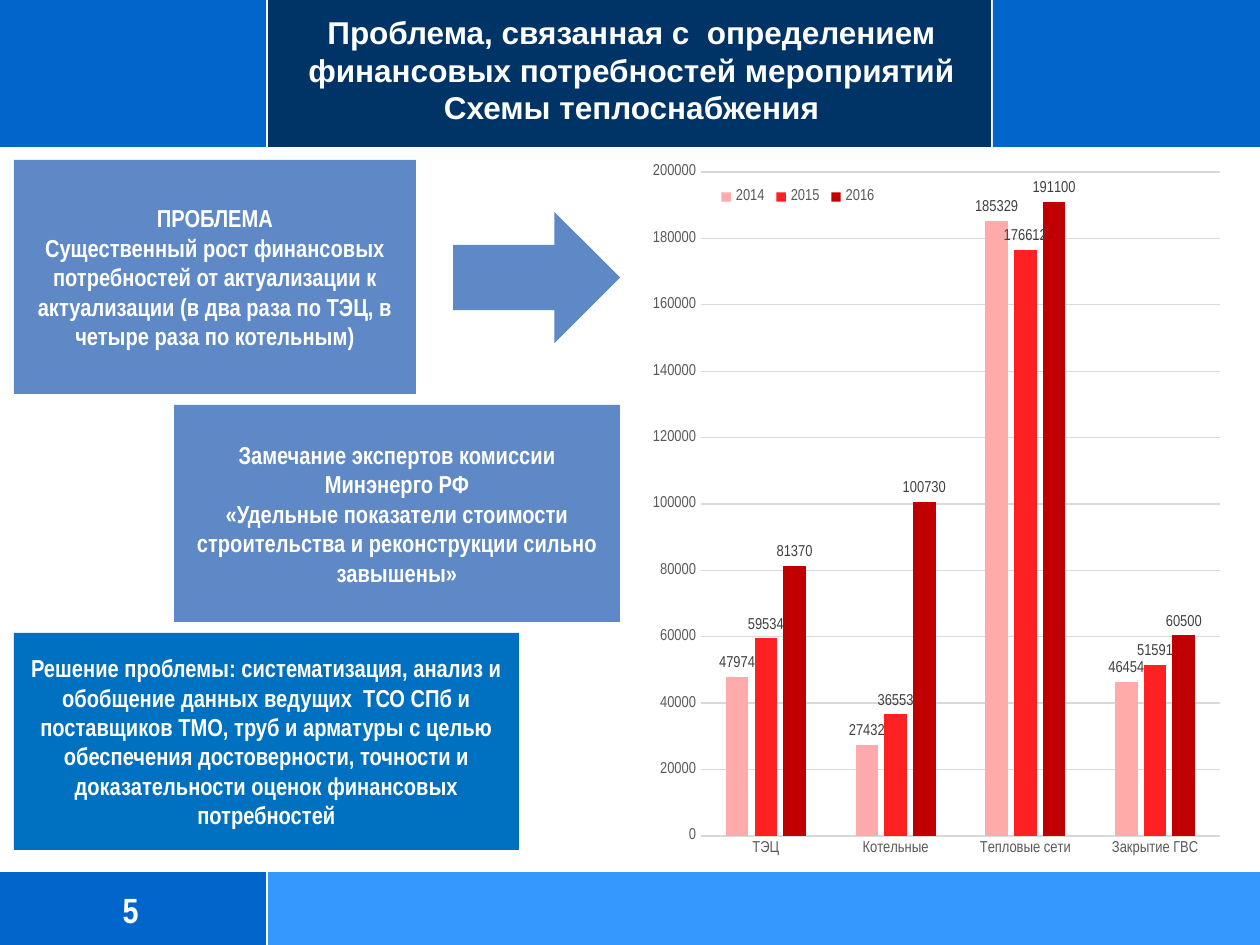
"""Builds a slide on the financial needs of the heat supply scheme."""
import lxml.etree
import pptx
import pptx.chart.data
import pptx.dml.color
import pptx.enum.chart
import pptx.enum.shapes
import pptx.enum.text
import pptx.oxml
import pptx.oxml.ns
import pptx.util

WIDTH, HEIGHT = 1260, 945
HEADER_BOTTOM, FOOTER_TOP = 148, 871
LEFT_EDGE, RIGHT_EDGE = 267, 992
WHITE, BLUE, NAVY, SKY = "FFFFFF", "0066CC", "003366", "3399FF"
STEEL, OCEAN, GRID, GREY, DARK = "5E88C6", "0070C0", "D9D9D9", "595959", "404040"
NARROW = "Arial Narrow"

TITLE = "Проблема, связанная с  определением финансовых потребностей мероприятий Схемы теплоснабжения"
PAGE_NUMBER = "5"

BANDS = [
    ((RIGHT_EDGE + 1, 0, WIDTH - RIGHT_EDGE - 1, HEADER_BOTTOM), BLUE),
    ((0, FOOTER_TOP, LEFT_EDGE, HEIGHT - FOOTER_TOP), BLUE),
    ((LEFT_EDGE, FOOTER_TOP, WIDTH - LEFT_EDGE, HEIGHT - FOOTER_TOP), SKY),
    ((0, 0, LEFT_EDGE, HEADER_BOTTOM), BLUE),
    ((LEFT_EDGE, 0, RIGHT_EDGE - LEFT_EDGE - 1, HEADER_BOTTOM), NAVY),
]
RULES = [
    (LEFT_EDGE, FOOTER_TOP, LEFT_EDGE, HEIGHT),
    (LEFT_EDGE, 0, LEFT_EDGE, HEADER_BOTTOM),
    (0, FOOTER_TOP, WIDTH, FOOTER_TOP),
    (0, HEADER_BOTTOM, WIDTH, HEADER_BOTTOM),
]
CARDS = [
    ((14, 160, 402, 234), STEEL, [
        "ПРОБЛЕМА",
        "Существенный рост финансовых потребностей от актуализации к актуализации "
        "(в два раза по ТЭЦ, в четыре раза по котельным)",
    ]),
    ((174, 405, 446, 217), STEEL, [
        "Замечание экспертов комиссии",
        "Минэнерго РФ",
        "«Удельные показатели стоимости строительства и реконструкции сильно завышены»",
    ]),
    ((14, 633, 505, 217), OCEAN, [
        "Решение проблемы: систематизация, анализ и обобщение данных ведущих  ТСО СПб и "
        "поставщиков ТМО, труб и арматуры с целью обеспечения достоверности, точности и "
        "доказательности оценок финансовых потребностей",
    ]),
]
ARROW = (453, 212, 167, 131)

CHART = (641, 150, 591, 757)
PLOT = (701, 172, 519, 664)
LEGEND = (715, 186, 166, 22)
CATEGORIES = ["ТЭЦ", "Котельные", "Тепловые сети", "Закрытие ГВС"]
SERIES = [
    ("2014", (47974, 27432, 185329, 46454), "FFABAB"),
    ("2015", (59534, 36553, 176612, 51591), "FF2121"),
    ("2016", (81370, 100730, 191100, 60500), "C00000"),
]


def px(*lengths):
    return [pptx.util.Emu(round(length * 914400 / 126)) for length in lengths]


def color(value):
    return pptx.dml.color.RGBColor.from_string(value)


def set_font(font, size, value, name=NARROW, bold=False):
    font.size = pptx.util.Pt(size)
    font.name = name
    font.bold = bold
    font.color.rgb = color(value)


def set_line(line, value, width):
    line.color.rgb = color(value)
    line.width = pptx.util.Pt(width)


def add_block(page, place, fill, kind="RECTANGLE"):
    shape = page.shapes.add_shape(pptx.enum.shapes.MSO_SHAPE[kind], *px(*place))
    shape.shadow.inherit = False
    shape.fill.solid()
    shape.fill.fore_color.rgb = color(fill)
    shape.line.fill.background()
    return shape


def add_rule(page, ends):
    rule = page.shapes.add_connector(pptx.enum.shapes.MSO_CONNECTOR.STRAIGHT, *px(*ends))
    set_line(rule.line, WHITE, 1.25)
    lxml.etree.SubElement(rule.element.spPr, pptx.oxml.ns.qn("a:effectLst"))


def write(box, lines, size, name=NARROW):
    frame = box.text_frame
    frame.word_wrap = True
    frame.auto_size = pptx.enum.text.MSO_AUTO_SIZE.NONE
    frame.vertical_anchor = pptx.enum.text.MSO_ANCHOR.MIDDLE
    frame.margin_left = frame.margin_right = frame.margin_top = frame.margin_bottom = 0
    for index, line in enumerate(lines):
        para = frame.add_paragraph() if index else frame.paragraphs[0]
        para.alignment = pptx.enum.text.PP_ALIGN.CENTER
        span = para.add_run()
        span.text = line
        set_font(span.font, size, WHITE, name, bold=True)


def layout_xml(place, inner=False):
    left, top, width, height = CHART
    shares = {
        "x": (place[0] - left) / width,
        "y": (place[1] - top) / height,
        "w": place[2] / width,
        "h": place[3] / height,
    }
    target = '<c:layoutTarget val="inner"/>' if inner else ""
    modes = '<c:xMode val="edge"/><c:yMode val="edge"/>'
    sizes = "".join(f'<c:{key} val="{share:.4f}"/>' for key, share in shares.items())
    return pptx.oxml.parse_xml(
        f'<c:layout {pptx.oxml.ns.nsdecls("c")}><c:manualLayout>'
        f"{target}{modes}{sizes}</c:manualLayout></c:layout>"
    )


def place_part(part, layout, index):
    for old in part.findall(pptx.oxml.ns.qn("c:layout")):
        part.remove(old)
    part.insert(index, layout)


def add_needs_chart(page):
    data = pptx.chart.data.CategoryChartData(number_format="General")
    data.categories = CATEGORIES
    for name, values, _ in SERIES:
        data.add_series(name, values)
    kind = pptx.enum.chart.XL_CHART_TYPE.COLUMN_CLUSTERED
    chart = page.shapes.add_chart(kind, *px(*CHART), data).chart
    set_font(chart.font, 9, "000000")
    chart.has_title = False

    plot = chart.plots[0]
    plot.gap_width, plot.overlap, plot.vary_by_categories = 219, -27, False
    for series, (_, _, fill) in zip(plot.series, SERIES):
        series.format.fill.solid()
        series.format.fill.fore_color.rgb = color(fill)
        labels = series.data_labels
        labels.show_value = True
        labels.position = pptx.enum.chart.XL_LABEL_POSITION.OUTSIDE_END
        set_font(labels.font, 9, DARK)

    for axis in (chart.category_axis, chart.value_axis):
        axis.major_tick_mark = axis.minor_tick_mark = pptx.enum.chart.XL_TICK_MARK.NONE
        set_font(axis.tick_labels.font, 9, GREY)
    set_line(chart.category_axis.format.line, GRID, 0.75)
    chart.value_axis.format.line.fill.background()
    chart.value_axis.minimum_scale, chart.value_axis.maximum_scale = 0, 200000
    chart.value_axis.major_unit = 20000
    set_line(chart.value_axis.major_gridlines.format.line, GRID, 0.75)

    chart.has_legend = True
    chart.legend.position = pptx.enum.chart.XL_LEGEND_POSITION.BOTTOM
    chart.legend.include_in_layout = True
    set_font(chart.legend.font, 9, GREY)

    root = chart.element
    place_part(root.find(".//" + pptx.oxml.ns.qn("c:plotArea")), layout_xml(PLOT, True), 0)
    place_part(root.find(".//" + pptx.oxml.ns.qn("c:legend")), layout_xml(LEGEND), 1)
    root.find(pptx.oxml.ns.qn("c:txPr")).addprevious(pptx.oxml.parse_xml(
        f'<c:spPr {pptx.oxml.ns.nsdecls("c", "a")}><a:noFill/>'
        "<a:ln><a:noFill/></a:ln></c:spPr>"
    ))


def main():
    deck = pptx.Presentation()
    deck.slide_width, deck.slide_height = px(WIDTH, HEIGHT)
    page = deck.slides.add_slide(deck.slide_layouts.get_by_name("Title Only"))
    for place, fill in BANDS:
        add_block(page, place, fill)
    for ends in RULES:
        add_rule(page, ends)

    title = page.shapes.title
    title.left, title.top, title.width, title.height = px(277, 0, 709, 139)
    write(title, [TITLE], 18, "Arial")
    title.element.getparent().append(title.element)
    write(page.shapes.add_textbox(*px(28, 877, 205, 66)), [PAGE_NUMBER], 20)

    for place, fill, lines in CARDS:
        write(add_block(page, place, fill), lines, 14)
    add_block(page, ARROW, STEEL, "RIGHT_ARROW")
    add_needs_chart(page)
    deck.save("out.pptx")


if __name__ == "__main__":
    main()
